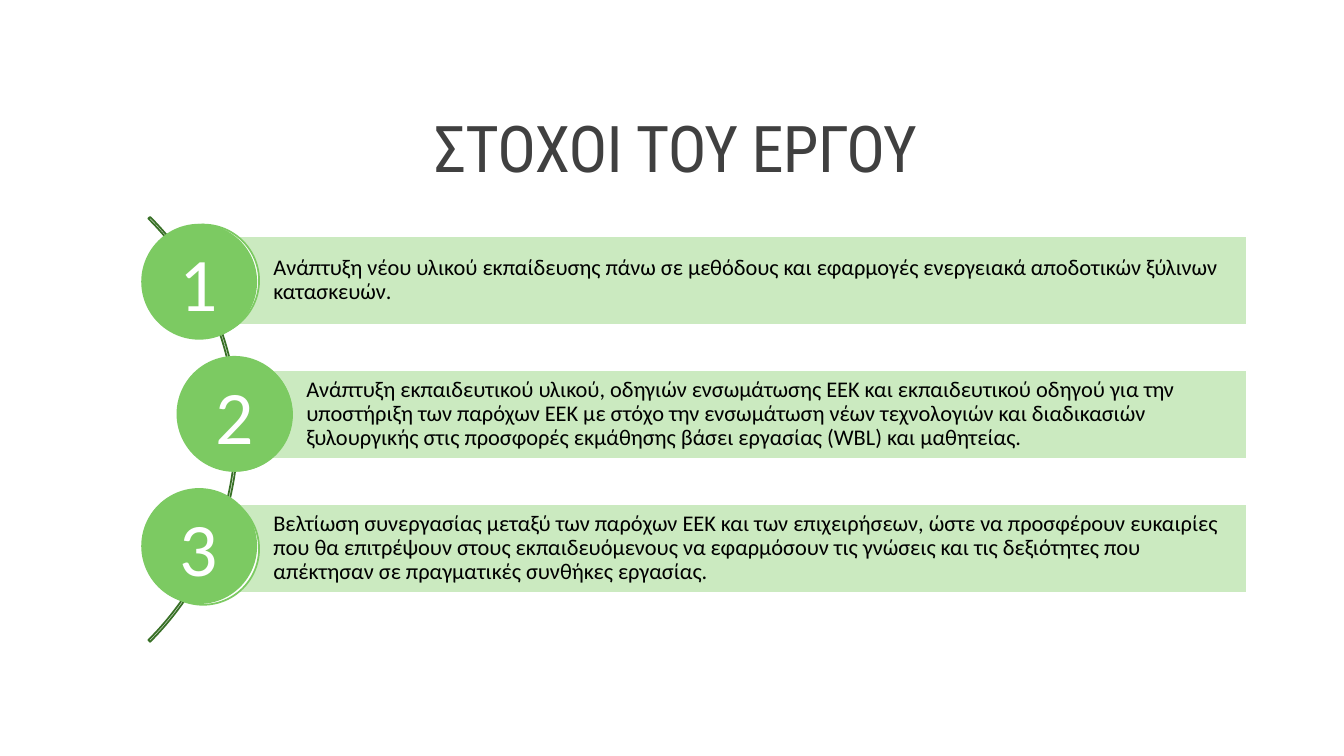
from pptx import Presentation
from pptx.dml.color import RGBColor
from pptx.enum.shapes import MSO_SHAPE as Preset
from pptx.enum.text import MSO_ANCHOR as Anchor, PP_ALIGN as Align
from pptx.util import Cm, Pt

TITLE = "ΣΤΟΧΟΙ ΤΟΥ ΕΡΓΟΥ"
GOALS = [
    "Ανάπτυξη νέου υλικού εκπαίδευσης πάνω σε μεθόδους και εφαρμογές "
    "ενεργειακά αποδοτικών ξύλινων κατασκευών.",
    "Ανάπτυξη εκπαιδευτικού υλικού, οδηγιών ενσωμάτωσης ΕΕΚ και εκπαιδευτικού "
    "οδηγού για την υποστήριξη των παρόχων ΕΕΚ με στόχο την ενσωμάτωση νέων "
    "τεχνολογιών και διαδικασιών ξυλουργικής στις προσφορές εκμάθησης βάσει "
    "εργασίας (WBL) και μαθητείας.",
    "Βελτίωση συνεργασίας μεταξύ των παρόχων ΕΕΚ και των επιχειρήσεων, ώστε να "
    "προσφέρουν ευκαιρίες που θα επιτρέψουν στους εκπαιδευόμενους να εφαρμόσουν "
    "τις γνώσεις και τις δεξιότητες που απέκτησαν σε πραγματικές συνθήκες εργασίας.",
]
BAR_LEFTS = [5.11, 5.94, 5.11]
DISC_LEFTS = [3.56, 4.45, 3.56]
BAR_RIGHT, BAR_TOP, BAR_HEIGHT, BAR_PITCH = 31.43, 5.94, 2.24, 3.38
RING_SIZE, RING_SHIFT, RING_RISE = 2.82, 1.4, 0.28
DISC_TOP, DISC_SIZE, DISC_PITCH = 5.64, 2.92, 3.33

TITLE_FORMAT = {"name": "Roboto Condensed", "size": Pt(46)}
GOAL_FORMAT = {"name": "Calibri", "size": Pt(16)}
NUMBER_FORMAT = {"name": "Calibri", "size": Pt(54)}


def color(value):
    """Turn a hex string into a colour."""
    return RGBColor.from_string(value)


def add_preset(slide, preset, box, fill=None, line=None):
    """Add a preset shape whose box is given in centimetres."""
    shape = slide.shapes.add_shape(preset, *(Cm(length) for length in box))
    shape.shadow.inherit = False
    if fill:
        shape.fill.solid()
        shape.fill.fore_color.rgb = color(fill)
    else:
        shape.fill.background()
    if line:
        shape.line.color.rgb = color(line)
        shape.line.width = Pt(1.25)
    else:
        shape.line.fill.background()
    return shape


def write_text(shape, text, font_format, text_color, align, anchor,
               margins=(0.25, 0.13, 0.25, 0.13), spacing=0.9):
    """Fill a shape with one formatted paragraph and return its run."""
    frame = shape.text_frame
    frame.word_wrap = True
    frame.vertical_anchor = anchor
    for side, margin in zip(("left", "top", "right", "bottom"), margins):
        setattr(frame, f"margin_{side}", Cm(margin))
    paragraph = frame.paragraphs[0]
    paragraph.alignment = align
    paragraph.line_spacing = spacing
    run = paragraph.add_run()
    run.text = text
    for name, value in font_format.items():
        setattr(run.font, name, value)
    run.font.color.rgb = color(text_color)
    return run


def add_title(slide):
    """Place and format the slide title."""
    title = slide.shapes.title
    title.left, title.top, title.width, title.height = Cm(3.05), Cm(0.79), Cm(27.94), Cm(4.04)
    run = write_text(title, TITLE, TITLE_FORMAT, "404040", Align.CENTER, Anchor.BOTTOM)
    run._r.get_or_add_rPr().set("spc", "-50")


def add_arc(slide):
    """Add the thin arc that links the numbers."""
    arc = add_preset(slide, Preset.BLOCK_ARC, (-9.14, 3.25, 15.14, 15.14), line="387026")
    for index, value in enumerate((189, 27, 0.004)):
        arc.adjustments[index] = value


def add_goal(slide, index, text):
    """Add the bar of one goal and the ring at its left end."""
    left, top = BAR_LEFTS[index], BAR_TOP + index * BAR_PITCH
    bar = add_preset(slide, Preset.RECTANGLE, (left, top, BAR_RIGHT - left, BAR_HEIGHT),
                     "CBEAC0", "FFFFFF")
    write_text(bar, text, GOAL_FORMAT, "000000", Align.LEFT, Anchor.MIDDLE,
               (1.78, 0.1, 0.1, 0.1))
    add_preset(slide, Preset.OVAL, (left - RING_SHIFT, top - RING_RISE, RING_SIZE, RING_SIZE),
               "FFFFFF", "7CCA62")


def add_number(slide, index):
    """Add the numbered disc of one goal."""
    box = (DISC_LEFTS[index], DISC_TOP + index * DISC_PITCH, DISC_SIZE, DISC_SIZE)
    disc = add_preset(slide, Preset.OVAL, box, "7CCA62")
    write_text(disc, str(index + 1), NUMBER_FORMAT, "FFFFFF", Align.CENTER, Anchor.MIDDLE,
               (0, 0, 0, 0), 1.0)


def main():
    """Build the slide and save it."""
    presentation = Presentation()
    presentation.slide_width, presentation.slide_height = Cm(33.87), Cm(19.05)
    slide = presentation.slides.add_slide(presentation.slide_layouts[5])
    add_title(slide)
    add_arc(slide)
    for index, text in enumerate(GOALS):
        add_goal(slide, index, text)
    for index in range(len(GOALS)):
        add_number(slide, index)
    presentation.save("out.pptx")


if __name__ == "__main__":
    main()
